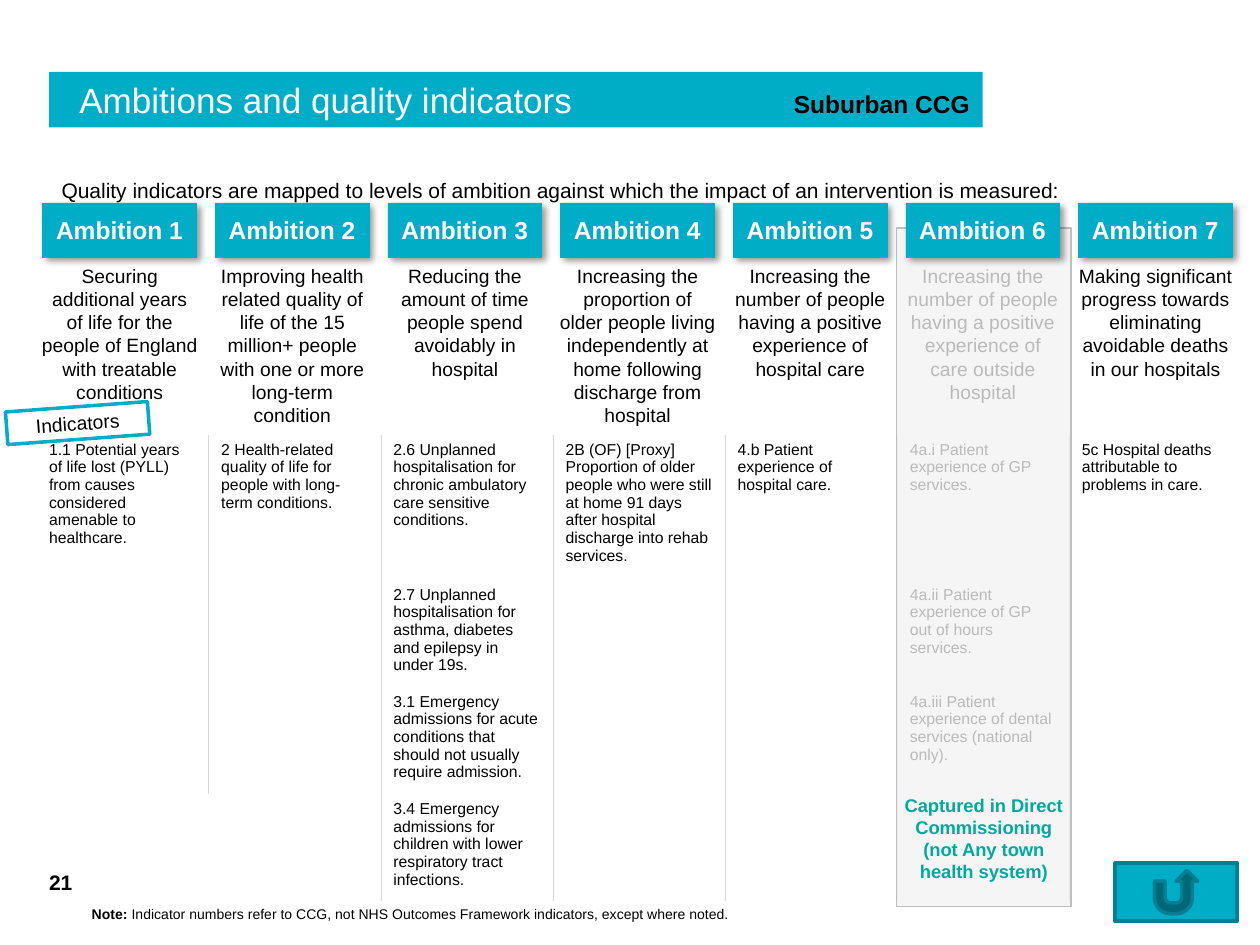
from lxml.etree import SubElement
from pptx import Presentation
from pptx.dml.color import RGBColor
from pptx.enum.shapes import MSO_SHAPE as Preset
from pptx.enum.text import MSO_ANCHOR as Anchor, MSO_AUTO_SIZE as AutoSize, PP_ALIGN as Align
from pptx.oxml import parse_xml
from pptx.oxml.ns import nsdecls, qn
from pptx.util import Cm, Pt

TEAL = RGBColor(0x00, 0xAD, 0xC6)
DARK_TEAL = RGBColor(0x00, 0x80, 0x92)
GREEN = RGBColor(0x00, 0xAA, 0x9E)
PALE_GREY = RGBColor(0xF2, 0xF2, 0xF2)
RULE_GREY = RGBColor(0xD9, 0xD9, 0xD9)
EDGE_GREY = RGBColor(0xBF, 0xBF, 0xBF)
BLACK = RGBColor(0, 0, 0)
WHITE = RGBColor(0xFF, 0xFF, 0xFF)

PITCH = 3.48
PLAIN_TABLE = "{2D5ABB26-0587-4C30-8999-92F81FD0307C}"
DROP_SHADOW = f"""<a:effectLst {nsdecls('a')}>
  <a:outerShdw blurRad="50800" dist="38100" dir="2700000" algn="tl" rotWithShape="0">
    <a:srgbClr val="000000"><a:alpha val="40000"/></a:srgbClr>
  </a:outerShdw></a:effectLst>"""

AMBITIONS = [
    "Securing additional years of life for the people of England with treatable conditions",
    "Improving health related quality of life of the 15 million+ people with one or more long-term condition",
    "Reducing the amount of time people spend avoidably in hospital",
    "Increasing the proportion of older people living independently at home following discharge from hospital",
    "Increasing the number of people having a positive experience of hospital care",
    "Increasing the number of people having a positive experience of care outside hospital",
    "Making significant progress towards eliminating avoidable deaths in our hospitals",
]
INDICATORS = [
    ["1.1 Potential years of life lost (PYLL) from causes considered amenable to healthcare."],
    ["2 Health-related quality of life for people with long-term conditions."],
    ["2.6 Unplanned hospitalisation for chronic ambulatory care sensitive conditions.",
     "2.7 Unplanned hospitalisation for asthma, diabetes and epilepsy in under 19s.",
     "3.1 Emergency admissions for acute conditions that should not usually require admission.",
     "3.4 Emergency admissions for children with lower respiratory tract infections."],
    ["2B (OF) [Proxy] Proportion of older people who were still at home 91 days after "
     "hospital discharge into rehab services."],
    ["4.b Patient experience of hospital care."],
    ["4a.i Patient experience of GP services.",
     "4a.ii Patient experience of GP out of hours services.",
     "4a.iii Patient experience of dental services (national only)."],
    ["5c Hospital deaths attributable to problems in care."],
]


def write(frame, text, size, color=BLACK, bold=False, align=Align.LEFT,
          anchor=Anchor.TOP, insets=(0, 0), wrap=True):
    """Fill a text frame with one paragraph; insets are (sides, top and bottom) in cm."""
    side, edge = (Cm(inset) for inset in insets)
    layout = {"word_wrap": wrap, "auto_size": AutoSize.NONE, "vertical_anchor": anchor,
              "margin_left": side, "margin_right": side,
              "margin_top": edge, "margin_bottom": edge}
    for name, value in layout.items():
        setattr(frame, name, value)
    para = frame.paragraphs[0]
    para.alignment = align
    para.space_before = Pt(0)
    for content, weight in (text if isinstance(text, list) else [(text, bold)]):
        span = para.add_run()
        span.text = content
        for name, value in {"name": "Arial", "size": Pt(size), "bold": weight}.items():
            setattr(span.font, name, value)
        span.font.color.rgb = color


def add_block(preset, area, fill, line, width):
    block = page.shapes.add_shape(preset, *map(Cm, area))
    block.shadow.inherit = False
    if fill is None:
        block.fill.background()
    else:
        block.fill.solid()
        block.fill.fore_color.rgb = fill
    block.line.color.rgb = line
    block.line.width = Pt(width)
    return block


deck = Presentation()
deck.slide_width, deck.slide_height = Cm(25.4), Cm(19.05)
page = deck.slides.add_slide(deck.slide_layouts[1])

# Title and introduction
title, intro = page.placeholders
for box, area in ((title, (0.99, 1.45, 18.82, 1.12)), (intro, (0.99, 3.45, 23.62, 0.79))):
    box.left, box.top, box.width, box.height = map(Cm, area)
title.fill.solid()
title.fill.fore_color.rgb = TEAL
write(title.text_frame, "Ambitions and quality indicators", 20, WHITE,
      anchor=Anchor.MIDDLE, insets=(0.61, 0))
intro_format = intro.text_frame.paragraphs[0]._p.get_or_add_pPr()
intro_format.set("marL", "0")
intro_format.set("indent", "0")
SubElement(intro_format, qn("a:buNone"))
write(intro.text_frame, "Quality indicators are mapped to levels of ambition against which "
      "the impact of an intervention is measured:", 12, insets=(0.25, 0.13))

# Ambition descriptions
for column, ambition in enumerate(AMBITIONS):
    box = page.shapes.add_textbox(Cm(0.61 + column * PITCH), Cm(5.23), Cm(3.61), Cm(3.5))
    write(box.text_frame, ambition, 11, align=Align.CENTER, insets=(0.23, 0.1))

# Indicator table
row_heights = [2.92, 2.16, 2.16, 2.16]
table = page.shapes.add_table(len(row_heights), len(INDICATORS), Cm(0.74), Cm(8.76),
                              Cm(24.29), Cm(sum(row_heights))).table
table.first_row = table.horz_banding = False
table._tbl.tblPr.find(qn("a:tableStyleId")).text = PLAIN_TABLE
for row, height in zip(table.rows, row_heights):
    row.height = Cm(height)
for number, entries in enumerate(INDICATORS):
    table.columns[number].width = Cm(3.47)
    for level in range(len(row_heights)):
        cell = table.cell(level, number)
        cell.margin_left = cell.margin_right = Cm(0.25)
        cell.margin_top = cell.margin_bottom = Cm(0.13)
        text = entries[level] if level < len(entries) else ""
        para = cell.text_frame.paragraphs[0]
        para.font.size = Pt(9)
        span = para.add_run()
        span.text = text
        span.font.name, span.font.size = "Arial", Pt(9)
        span.font.color.rgb = BLACK
        # The lowest row has no rule between the first two columns
        open_side = {0: "a:lnR", 1: "a:lnL"}.get(number) if level == 3 else None
        for side, outer in (("a:lnL", 0), ("a:lnR", len(INDICATORS) - 1)):
            if number != outer and side != open_side:
                rule = SubElement(cell._tc.get_or_add_tcPr(), qn(side), w=str(Pt(0.5)))
                paint = SubElement(rule, qn("a:solidFill"))
                SubElement(paint, qn("a:srgbClr"), val=str(RULE_GREY))
        cell.fill.background()

# Veil over the sixth ambition
veil = add_block(Preset.RECTANGLE, (18.08, 4.6, 3.51, 13.67), PALE_GREY, EDGE_GREY, 0.75)
veil_color = veil._element.spPr.find(qn("a:solidFill")).find(qn("a:srgbClr"))
SubElement(veil_color, qn("a:alpha"), val="77000")

# Ambition headers
for column in range(len(AMBITIONS)):
    header = add_block(Preset.RECTANGLE, (0.86 + column * PITCH, 4.09, 3.1, 1.09),
                       TEAL, TEAL, 0.25)
    properties = header._element.spPr
    properties.replace(properties.find(qn("a:effectLst")), parse_xml(DROP_SHADOW))
    write(header.text_frame, f"Ambition {column + 1}", 14, WHITE, True, Align.CENTER,
          Anchor.MIDDLE, (0.18, 0.1))

tag = add_block(Preset.RECTANGLE, (0.13, 8.2, 2.87, 0.66), None, TEAL, 2)
tag.rotation = 355.8
write(tag.text_frame, "Indicators", 11, align=Align.CENTER, anchor=Anchor.MIDDLE,
      insets=(0.23, 0.1))
add_block(Preset.ACTION_BUTTON_RETURN, (22.48, 17.4, 2.46, 1.17), TEAL, DARK_TEAL, 2)

# Labels and footer
note = [("Note: ", True), ("Indicator numbers refer to CCG, not NHS Outcomes Framework "
                           "indicators, except where noted.", False)]
labels = [
    ((16, 1.8, 3.56, 0.61), "Suburban CCG", 14,
     {"bold": True, "align": Align.CENTER, "wrap": False}),
    ((18.08, 15.9, 3.51, 2.03), "Captured in Direct Commissioning (not Any town health system)",
     10.5, {"color": GREEN, "bold": True, "align": Align.CENTER, "insets": (0.1, 0.1)}),
    ((0.99, 17.53, 0.84, 0.51), "21", 12, {"bold": True, "anchor": Anchor.BOTTOM}),
    ((1.85, 18.26, 17.48, 0.33), note, 8, {}),
]
for area, text, size, style in labels:
    box = page.shapes.add_textbox(*map(Cm, area))
    write(box.text_frame, text, size, **style)

deck.save("out.pptx")
